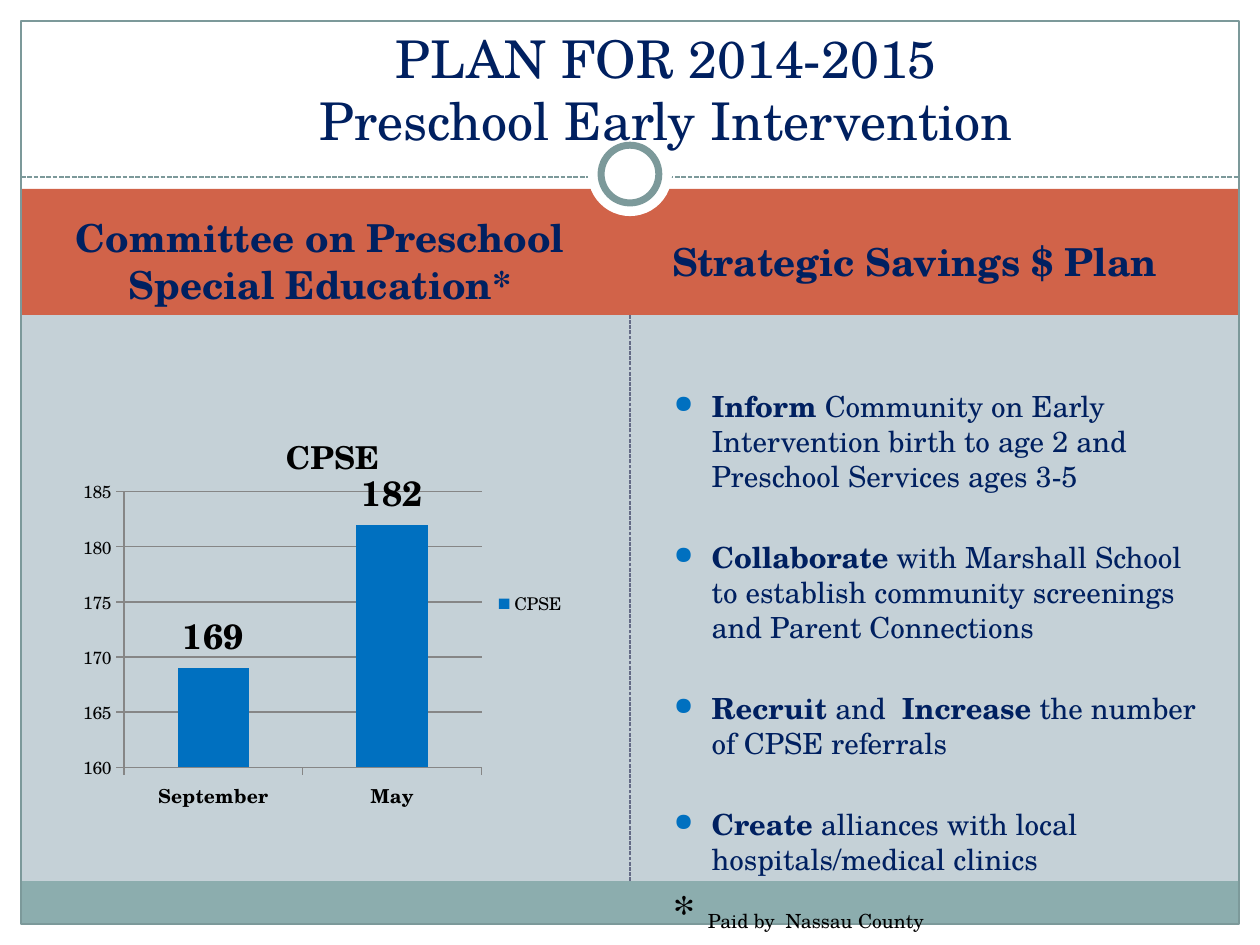
from dataclasses import dataclass

from lxml import etree
from pptx import Presentation
from pptx import util as u
from pptx.chart.data import CategoryChartData
from pptx.dml.color import RGBColor
from pptx.enum import chart as charts, dml, shapes, text
from pptx.oxml import ns


@dataclass(frozen=True)
class Theme:
    font: str = "TeX Gyre Schola"
    background: str = "C5D1D7"
    white: str = "FFFFFF"
    black: str = "000000"
    navy: str = "002060"
    blue: str = "0070C0"
    header: str = "D16349"
    footer: str = "8CADAE"
    frame: str = "7C999A"
    divider: str = "646B86"
    grid: str = "868686"
    title_size: float = 29.7
    heading_size: float = 22
    body_size: float = 16.6
    star_size: float = 25
    note_size: float = 11.1
    chart_size: float = 10
    category_size: float = 11
    chart_title_size: float = 18
    label_size: float = 20


THEME = Theme()
WIDTH, HEIGHT, MARGIN = 720, 540, 12
INNER = WIDTH - 2 * MARGIN
HEADER_TOP, HEADER_HEIGHT, FOOTER_TOP = 108, 72, 503.5
FOOTER_HEIGHT = HEIGHT - MARGIN - FOOTER_TOP
RULE_TOP = 101
BULLETS = [
    [("Inform ", True),
     ("Community on Early Intervention birth to age 2 and Preschool Services ages 3-5", False)],
    [("Collaborate", True),
     (" with Marshall School to establish community screenings and Parent Connections", False)],
    [("Recruit ", True), ("and  ", False), ("Increase ", True),
     ("the number of CPSE referrals", False)],
    [("Create", True), (" alliances with local hospitals/medical clinics", False)],
]


def color(value):
    return RGBColor.from_string(value)


def style_font(font, size, value, bold=False):
    font.name = THEME.font
    font.size = u.Pt(size)
    font.bold = bold
    font.color.rgb = color(value)


def add_block(slide, left, top, width, height, fill=None, line=None, weight=0.75,
              kind=shapes.MSO_SHAPE.RECTANGLE):
    shape = slide.shapes.add_shape(kind, u.Pt(left), u.Pt(top), u.Pt(width), u.Pt(height))
    shape.shadow.inherit = False
    if fill:
        shape.fill.solid()
        shape.fill.fore_color.rgb = color(fill)
    else:
        shape.fill.background()
    if line:
        shape.line.color.rgb = color(line)
        shape.line.width = u.Pt(weight)
    else:
        shape.line.fill.background()
    return shape


def add_circle(slide, center_y, diameter, **style):
    return add_block(slide, (WIDTH - diameter) / 2, center_y - diameter / 2, diameter, diameter,
                     kind=shapes.MSO_SHAPE.OVAL, **style)


def add_dashed_line(slide, x1, y1, x2, y2, line, weight):
    connector = slide.shapes.add_connector(
        shapes.MSO_CONNECTOR.STRAIGHT, u.Pt(x1), u.Pt(y1), u.Pt(x2), u.Pt(y2))
    connector.line.color.rgb = color(line)
    connector.line.width = u.Pt(weight)
    connector.line.dash_style = dml.MSO_LINE.SQUARE_DOT
    etree.SubElement(connector.element.spPr, ns.qn("a:effectLst"))
    return connector


def add_text_frame(slide, left, top, width, height, anchor=text.MSO_ANCHOR.TOP):
    box = slide.shapes.add_textbox(u.Pt(left), u.Pt(top), u.Pt(width), u.Pt(height))
    box.text_frame.word_wrap = True
    box.text_frame.vertical_anchor = anchor
    return box.text_frame


def add_heading(slide, content, left, top, width, height, size, bold, anchor, alignment):
    frame = add_text_frame(slide, left, top, width, height, anchor)
    frame.text = content
    paragraph = frame.paragraphs[0]
    paragraph.alignment = alignment
    style_font(paragraph.font, size, THEME.navy, bold)
    for run in paragraph.runs:
        style_font(run.font, size, THEME.navy, bold)


def add_bullet(paragraph):
    properties = paragraph._p.get_or_add_pPr()
    properties.set("marL", str(u.Pt(21.6)))
    properties.set("indent", str(u.Pt(-21.6)))
    bullet_color = etree.SubElement(properties, ns.qn("a:buClr"))
    etree.SubElement(bullet_color, ns.qn("a:srgbClr"), val=THEME.blue)
    etree.SubElement(properties, ns.qn("a:buSzPct"), val="85000")
    etree.SubElement(properties, ns.qn("a:buChar"), char="●")


def add_run(paragraph, content, size, value, bold=False):
    run = paragraph.add_run()
    run.text = content
    style_font(run.font, size, value, bold)


def add_plan(slide):
    frame = add_text_frame(slide, 378, 218.5, 318, 318)
    for index, parts in enumerate(BULLETS):
        paragraph = frame.add_paragraph() if index else frame.paragraphs[0]
        add_bullet(paragraph)
        paragraph.space_before = u.Pt(26.5 if index else 0)
        for content, bold in parts:
            add_run(paragraph, content, THEME.body_size, THEME.navy, bold)
    note = frame.add_paragraph()
    note.space_before = u.Pt(5)
    add_run(note, "* ", THEME.star_size, THEME.black)
    add_run(note, "Paid by  Nassau County", THEME.note_size, THEME.black)


def set_layout(parent, position, **values):
    for old in parent.findall(ns.qn("c:layout")):
        parent.remove(old)
    layout = etree.Element(ns.qn("c:layout"))
    manual = etree.SubElement(layout, ns.qn("c:manualLayout"))
    for name, value in values.items():
        etree.SubElement(manual, ns.qn(f"c:{name}"), val=str(value))
    parent.insert(position, layout)


def add_referral_chart(slide):
    data = CategoryChartData()
    data.categories = ["September", "May"]
    data.add_series("CPSE", [169, 182])
    chart = slide.shapes.add_chart(charts.XL_CHART_TYPE.COLUMN_CLUSTERED,
                                   u.Pt(42), u.Pt(222), u.Pt(288), u.Pt(246), data).chart
    style_font(chart.font, THEME.chart_size, THEME.black)
    chart.has_title = True
    title_frame = chart.chart_title.text_frame
    title_frame.text = "CPSE"
    style_font(title_frame.paragraphs[0].runs[0].font, THEME.chart_title_size, THEME.black, True)
    chart.has_legend = True
    chart.legend.position = charts.XL_LEGEND_POSITION.RIGHT
    chart.legend.include_in_layout = False

    plot = chart.plots[0]
    plot.gap_width = 150
    plot.vary_by_categories = False
    series = plot.series[0]
    series.format.fill.solid()
    series.format.fill.fore_color.rgb = color(THEME.blue)
    labels = series.data_labels
    labels.show_value = True
    labels.position = charts.XL_LABEL_POSITION.OUTSIDE_END
    style_font(labels.font, THEME.label_size, THEME.black, True)

    values, categories = chart.value_axis, chart.category_axis
    values.minimum_scale, values.maximum_scale, values.major_unit = 160, 185, 5
    style_font(categories.tick_labels.font, THEME.category_size, THEME.black, True)
    for part in (values, categories, values.major_gridlines):
        part.format.line.color.rgb = color(THEME.grid)
        part.format.line.width = u.Pt(0.75)

    set_layout(chart.chart_title._element, 1, xMode="edge", yMode="edge", x=0.41, y=0.08)
    set_layout(plot._element.getparent(), 0, layoutTarget="inner", xMode="edge", yMode="edge",
               x=0.1, y=0.24, w=0.71, h=0.64)


def add_backdrop(slide):
    slide.background.fill.solid()
    slide.background.fill.fore_color.rgb = color(THEME.background)
    for area in [(0, 0, WIDTH, HEADER_TOP), (0, HEIGHT - MARGIN, WIDTH, MARGIN),
                 (0, 0, MARGIN, HEIGHT), (WIDTH - MARGIN, 0, MARGIN, HEIGHT)]:
        add_block(slide, *area, fill=THEME.white)
    header = add_block(slide, MARGIN, HEADER_TOP, INNER, HEADER_HEIGHT, fill=THEME.header)
    footer = add_block(slide, MARGIN, FOOTER_TOP, INNER, FOOTER_HEIGHT, fill=THEME.footer)
    divider = add_dashed_line(slide, WIDTH / 2, FOOTER_TOP, WIDTH / 2, HEADER_TOP + HEADER_HEIGHT,
                              THEME.divider, 0.75)
    divider.begin_connect(footer, 0)
    divider.end_connect(header, 2)
    add_dashed_line(slide, MARGIN, RULE_TOP, WIDTH - MARGIN, RULE_TOP, THEME.frame, 0.9)
    add_block(slide, MARGIN, MARGIN, INNER, HEIGHT - 2 * MARGIN, line=THEME.frame)
    add_circle(slide, 99.5, 48, fill=THEME.white)
    add_circle(slide, 99.5, 33, fill=THEME.white, line=THEME.frame, weight=4)


def main():
    presentation = Presentation()
    presentation.slide_width, presentation.slide_height = u.Pt(WIDTH), u.Pt(HEIGHT)
    slide = presentation.slides.add_slide(presentation.slide_layouts[6])
    add_backdrop(slide)
    middle, center, left = text.MSO_ANCHOR.MIDDLE, text.PP_ALIGN.CENTER, text.PP_ALIGN.LEFT
    for content, x, alignment in [("Committee on Preschool Special Education*", 24, center),
                                  ("Strategic Savings $ Plan", 377, left)]:
        add_heading(slide, content, x, 120, 318, 58, THEME.heading_size, True, middle, alignment)
    add_plan(slide)
    add_heading(slide, "PLAN FOR 2014-2015\vPreschool Early Intervention", 45, 12, 672, 78,
                THEME.title_size, False, text.MSO_ANCHOR.BOTTOM, center)
    add_referral_chart(slide)
    presentation.save("out.pptx")


if __name__ == "__main__":
    main()
